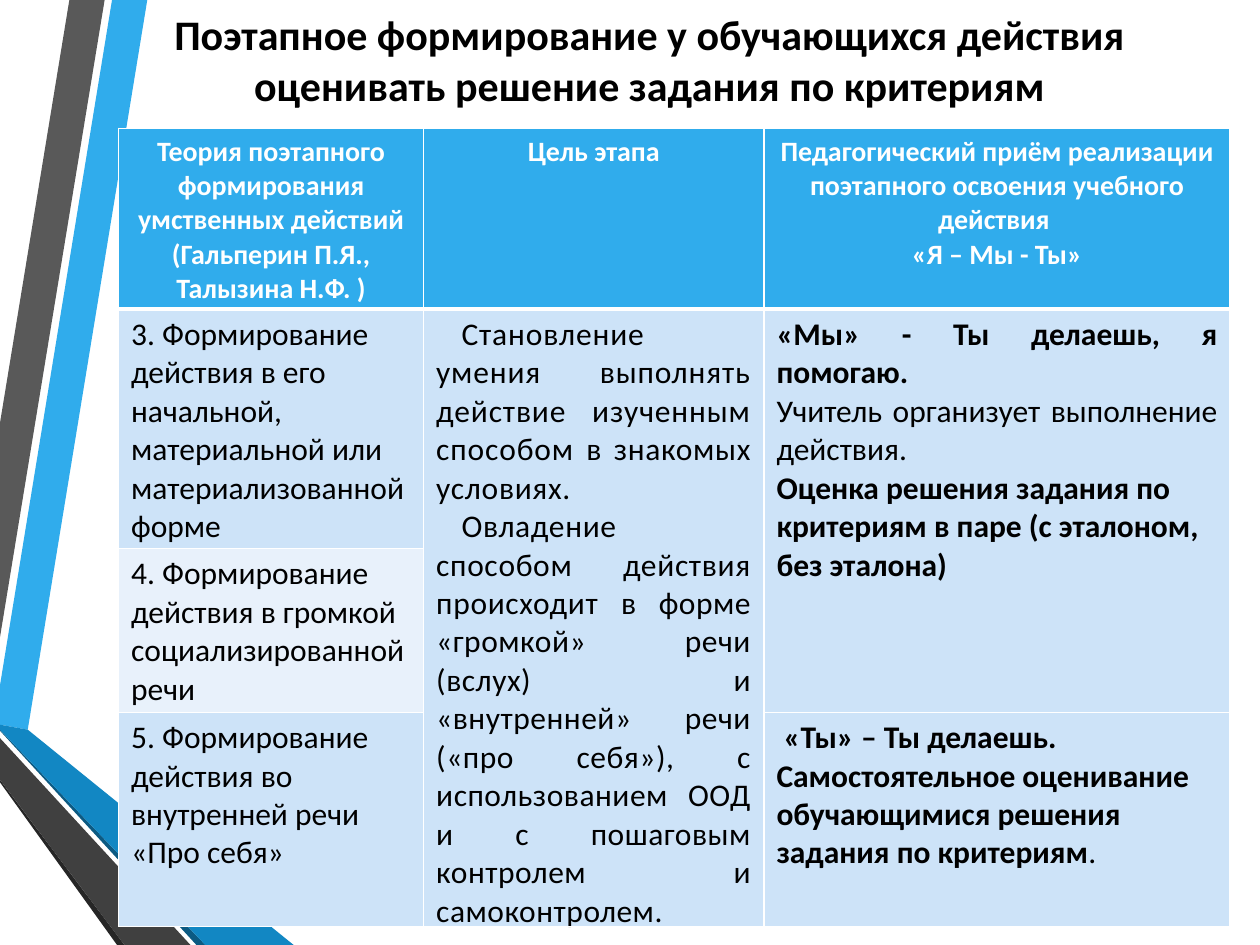
from dataclasses import dataclass

from pptx import Presentation
from pptx import util as u
from pptx.dml.color import RGBColor
from pptx.enum import text
from pptx.oxml.ns import qn
from lxml import etree

CENTER = text.PP_ALIGN.CENTER
JUSTIFY = text.PP_ALIGN.JUSTIFY
LEFT = text.PP_ALIGN.LEFT


@dataclass(frozen=True)
class Theme:
    font: str = "Calibri"
    title_size: int = 24
    header_size: int = 16
    body_size: int = 18
    ink: str = "000000"
    white: str = "FFFFFF"
    blue: str = "30ACEC"
    mid_blue: str = "1287C3"
    deep_blue: str = "0C5A82"
    gray: str = "595959"
    dark_gray: str = "404040"
    near_black: str = "262626"
    band: str = "CDE3F8"
    light_band: str = "E8F1FB"


@dataclass
class Run:
    text: str
    bold: bool = False
    spacing: float = 0  # points between letters


@dataclass
class Para:
    runs: list
    align: int = LEFT
    indent: float = 0  # first line, cm


class SlideBuilder:
    def __init__(self, slide, theme):
        self.slide = slide
        self.theme = theme

    def polygon(self, points, color):
        pen = self.slide.shapes.build_freeform(
            *(u.Cm(v) for v in points[0]), scale=1.0)
        pen.add_line_segments([(u.Cm(x), u.Cm(y)) for x, y in points[1:]])
        facet = pen.convert_to_shape()
        facet.shadow.inherit = False
        facet.fill.solid()
        facet.fill.fore_color.rgb = RGBColor.from_string(color)
        facet.line.fill.background()

    def fill_text(self, frame, paras, size, color):
        for i, para in enumerate(paras):
            p = frame.add_paragraph() if i else frame.paragraphs[0]
            p.alignment = para.align
            p.font.name = self.theme.font
            p.font.size = u.Pt(size)
            p.font.color.rgb = RGBColor.from_string(color)
            if para.indent:
                props = p._p.get_or_add_pPr()
                props.set("marL", "0")
                props.set("indent", str(u.Cm(para.indent)))
            for part in para.runs:
                run = p.add_run()
                run.text = part.text
                run.font.bold = part.bold
                if part.spacing:
                    run._r.get_or_add_rPr().set("spc", str(round(part.spacing * 100)))

    def title(self, words, left, top, width, height):
        box = self.slide.shapes.add_textbox(*map(u.Cm, (left, top, width, height)))
        frame = box.text_frame
        frame.word_wrap = True
        frame.vertical_anchor = text.MSO_ANCHOR.MIDDLE
        self.fill_text(frame, [Para([Run(words, True)], CENTER)],
                       self.theme.title_size, self.theme.ink)

    def borders(self, cell, widths):
        props = cell._tc.get_or_add_tcPr()
        for i, (side, width) in enumerate(widths.items()):
            line = etree.Element(qn(f"a:ln{side}"), w=str(u.Pt(width)))
            fill = etree.SubElement(line, qn("a:solidFill"))
            etree.SubElement(fill, qn("a:srgbClr"), val=self.theme.white)
            props.insert(i, line)

    def table(self, left, top, widths, heights, height, cells, merges, fills):
        frame = self.slide.shapes.add_table(
            len(heights), len(widths), u.Cm(left), u.Cm(top),
            u.Cm(sum(widths)), u.Cm(height))
        grid = frame.table
        for column, width in zip(grid.columns, widths):
            column.width = u.Cm(width)
        for row, row_height in zip(grid.rows, heights):
            row.height = u.Cm(row_height)
        frame.height = u.Cm(height)
        for first, last in merges:
            grid.cell(*first).merge(grid.cell(*last))
        for r in range(len(heights)):
            for c in range(len(widths)):
                cell = grid.cell(r, c)
                cell.fill.solid()
                # Merged columns keep the colour of their first row
                shade = fills[r] if c == 0 or r == 0 else fills[min(r, 1)]
                cell.fill.fore_color.rgb = RGBColor.from_string(shade)
                self.borders(cell, {"L": 1, "R": 1, "T": 3 if r == 1 else 1,
                                    "B": 3 if r == 0 else 1})
                if (r, c) in cells:
                    size, color = ((self.theme.header_size, self.theme.white) if r == 0
                                   else (self.theme.body_size, self.theme.ink))
                    self.fill_text(cell.text_frame, cells[r, c], size, color)


def main():
    theme = Theme()
    deck = Presentation()
    deck.slide_width, deck.slide_height = u.Cm(25.4), u.Cm(19.05)
    builder = SlideBuilder(deck.slides.add_slide(deck.slide_layouts[6]), theme)

    # Folded ribbons along the left edge
    bottom = 19.05
    ribbons = [
        (theme.blue, [(0, 13.82), (0, 14.61), (0.56, 14.71), (2.97, 0), (2.26, 0)]),
        (theme.gray, [(2.11, 0), (1.4, 0), (0, 8.53), (0, 12.85)]),
        (theme.near_black, [(0, 15.72), (0, 15.77), (2.36, bottom), (2.51, bottom)]),
        (theme.deep_blue, [(0, 14.71), (0, 14.73), (3.96, bottom), (4.14, bottom)]),
        (theme.mid_blue, [(0, 14.71), (4.14, bottom), (5.92, bottom),
                          (0.56, 14.71), (0, 14.61)]),
        (theme.dark_gray, [(0, 15.72), (2.51, bottom), (3.84, bottom), (0, 14.88)]),
    ]
    for color, points in ribbons:
        builder.polygon(points, color)

    # Title
    builder.title("Поэтапное формирование у обучающихся действия "
                  "оценивать решение задания по критериям", 2.77, 0, 20.65, 2.39)

    # Stages table: header, stages, goal, teaching technique
    def heading(*lines):
        return [Para([Run(line, True)], CENTER) for line in lines]

    def stage(words):
        return [Para([Run(words)])]

    cells = {
        (0, 0): heading("Теория поэтапного формирования умственных действий "
                        "(Гальперин П.Я., Талызина Н.Ф. )"),
        (0, 1): heading("Цель этапа"),
        (0, 2): heading("Педагогический приём реализации поэтапного освоения "
                        "учебного действия ", "«Я – Мы - Ты»"),
        (1, 0): stage("3. Формирование действия в его начальной, материальной "
                      "или материализованной форме"),
        (2, 0): stage("4. Формирование действия в громкой социализированной речи"),
        (3, 0): stage("5. Формирование действия во внутренней речи «Про себя»"),
        (1, 1): [
            Para([Run("Становление умения выполнять действие изученным способом ",
                      spacing=0.5),
                  Run("в знакомых условиях. ", spacing=0.4)], JUSTIFY, 0.51),
            Para([Run("Овладение способом действия происходит ", spacing=0.4),
                  Run("в форме «громкой» речи (вслух) и «внутренней» речи "
                      "(«про себя»), с использованием ООД и с пошаговым "
                      "контролем и самоконтролем. ", spacing=0.3)], JUSTIFY, 0.51),
        ],
        (1, 2): [
            Para([Run("«Мы» - Ты делаешь, я помогаю.", True)], JUSTIFY),
            Para([Run("Учитель организует выполнение действия.")], JUSTIFY),
            Para([Run("Оценка решения задания по критериям в паре "
                      "(с эталоном, без эталона)", True)]),
        ],
        (3, 2): [
            Para([Run(" "), Run("«Ты» – Ты делаешь. ", True)], JUSTIFY),
            Para([Run("Самостоятельное оценивание обучающимися решения "
                      "задания по критериям", True), Run(".")]),
        ],
    }
    builder.table(2.39, 2.59, [6.15, 6.86, 9.4], [3.18, 4.19, 2.87, 2.87], 16.08,
                  cells, merges=[((1, 1), (3, 1)), ((1, 2), (2, 2))],
                  fills=[theme.blue, theme.band, theme.light_band, theme.band])

    deck.save("out.pptx")


if __name__ == "__main__":
    main()
